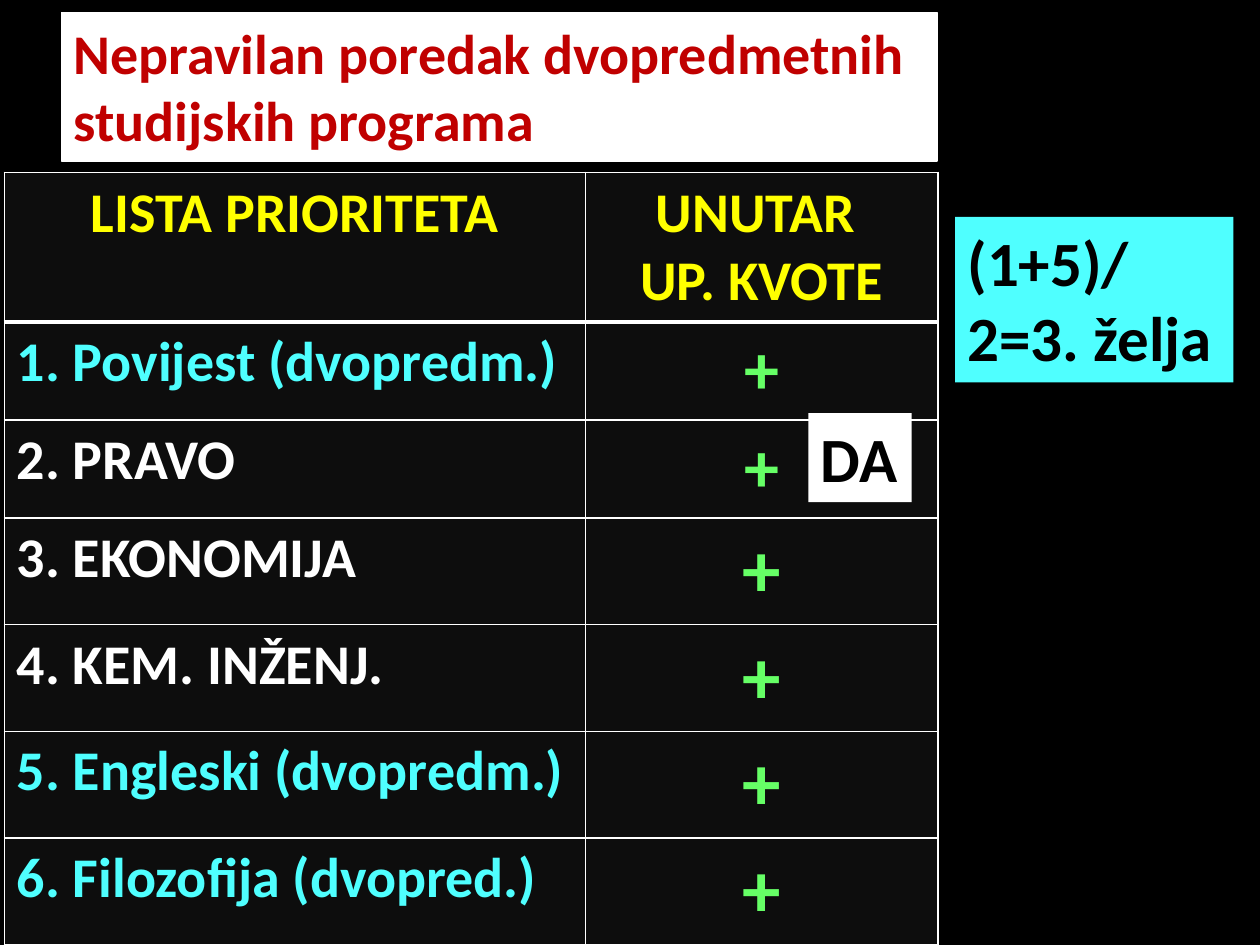
from lxml import etree
from pptx import Presentation
from pptx.dml.color import RGBColor
from pptx.enum import shapes, text
from pptx.oxml.ns import qn
from pptx.util import Pt

FONT = "Calibri"
BLACK, WHITE, PANEL = "000000", "FFFFFF", "0D0D0D"
RED, YELLOW, CYAN, GREEN = "C00000", "FFFF00", "4FFFFF", "66FF66"

# Choice, its colour, size of the plus sign, row height
CHOICES = [
    ("1. Povijest (dvopredm.)", CYAN, 40, 42.5),
    ("2. PRAVO", WHITE, 40, 42.5),
    ("3. EKONOMIJA", WHITE, 44, 56),
    ("4. KEM. INŽENJ.", WHITE, 44, 56),
    ("5. Engleski (dvopredm.)", CYAN, 44, 56),
    ("6. Filozofija (dvopred.)", CYAN, 44, 60),
]


def color(hex_code):
    return RGBColor.from_string(hex_code)


def write(frame, lines, size, hue, align=text.PP_ALIGN.LEFT):
    for i, line in enumerate(lines):
        paragraph = frame.paragraphs[0] if i == 0 else frame.add_paragraph()
        paragraph.alignment = align
        run = paragraph.add_run()
        run.text = line
        run.font.name, run.font.size, run.font.bold = FONT, Pt(size), True
        run.font.color.rgb = color(hue)


def add_label(slide, box, lines, size, hue, fill, wrap=False, outline=None):
    label = slide.shapes.add_shape(shapes.MSO_SHAPE.RECTANGLE, *map(Pt, box))
    label.shadow.inherit = False
    label.fill.solid()
    label.fill.fore_color.rgb = color(fill)
    if outline:
        label.line.color.rgb = color(outline)
        label.line.width = Pt(0.75)
    else:
        label.line.fill.background()
    frame = label.text_frame
    frame.word_wrap = wrap
    frame.auto_size = text.MSO_AUTO_SIZE.SHAPE_TO_FIT_TEXT
    frame.vertical_anchor = text.MSO_ANCHOR.TOP
    write(frame, lines, size, hue)


def style_cell(cell, top=1, bottom=1):
    # Borders must precede the fill in the cell properties
    props = cell._tc.get_or_add_tcPr()
    for side, width in (("L", 1), ("R", 1), ("T", top), ("B", bottom)):
        border = etree.SubElement(props, qn(f"a:ln{side}"), w=str(Pt(width)))
        paint = etree.SubElement(border, qn("a:solidFill"))
        etree.SubElement(paint, qn("a:srgbClr"), val=WHITE)
    cell.fill.solid()
    cell.fill.fore_color.rgb = color(PANEL)


def add_priorities(slide, box):
    table = slide.shapes.add_table(len(CHOICES) + 1, 2, *map(Pt, box)).table
    choice_width = 332
    table.columns[0].width = Pt(choice_width)
    table.columns[1].width = Pt(box[2] - choice_width)
    center = text.PP_ALIGN.CENTER

    # Header
    table.rows[0].height = Pt(78.5)
    headings = (["LISTA PRIORITETA"], ["UNUTAR ", "UP. KVOTE"])
    for column, heading in enumerate(headings):
        cell = table.cell(0, column)
        style_cell(cell, bottom=3)
        write(cell.text_frame, heading, 32, YELLOW, center)

    # Choices
    for row, (choice, hue, plus_size, height) in enumerate(CHOICES, 1):
        table.rows[row].height = Pt(height)
        name_cell, quota_cell = table.cell(row, 0), table.cell(row, 1)
        for cell in (name_cell, quota_cell):
            style_cell(cell, top=3 if row == 1 else 1)
        write(name_cell.text_frame, [choice], 32, hue)
        write(quota_cell.text_frame, ["+"], plus_size, GREEN, center)


def main():
    deck = Presentation()
    deck.slide_width, deck.slide_height = Pt(720), Pt(540)
    slide = deck.slides.add_slide(deck.slide_layouts[6])
    slide.background.fill.solid()
    slide.background.fill.fore_color.rgb = color(BLACK)

    add_priorities(slide, (2.5, 98.5, 533.5, 434))
    # Calculation of the rank and the outcome
    add_label(slide, (545.75, 124, 159, 94.5), ["(1+5)/2=3. želja"], 36, BLACK, CYAN, wrap=True)
    add_label(slide, (462, 236, 59, 51), ["DA"], 36, BLACK, WHITE)
    # Title
    add_label(slide, (35, 7, 500.5, 85),
              ["Nepravilan poredak dvopredmetnih", "studijskih programa"],
              32, RED, WHITE, outline=WHITE)

    deck.save("out.pptx")


if __name__ == "__main__":
    main()
